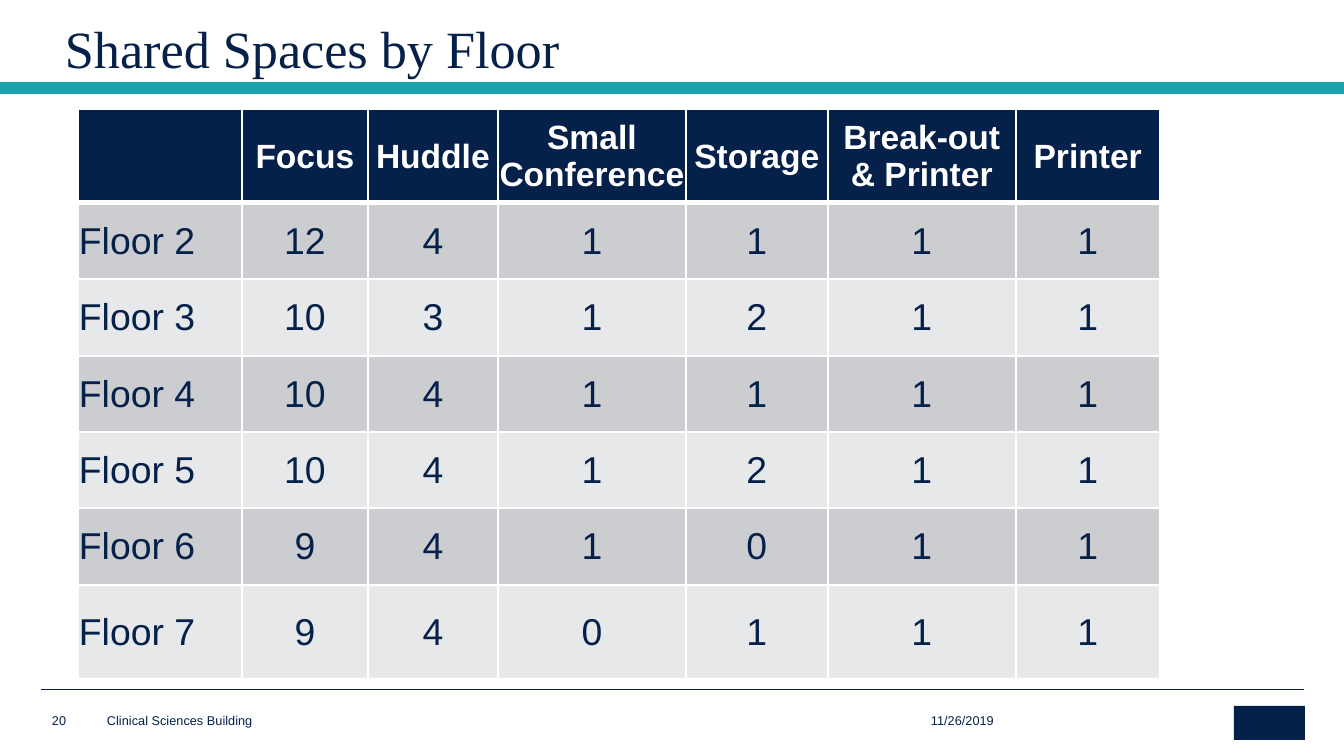
"""Build the Shared Spaces by Floor slide."""
from lxml import etree
from pptx import Presentation
from pptx.dml.color import RGBColor
from pptx.enum.shapes import MSO_CONNECTOR, MSO_SHAPE
from pptx.enum.text import MSO_ANCHOR, PP_ALIGN
from pptx.oxml.ns import qn
from pptx.util import Pt

PX = 914400 / 134.4
LEFT, CENTER = PP_ALIGN.LEFT, PP_ALIGN.CENTER
MIDDLE, BOTTOM = MSO_ANCHOR.MIDDLE, MSO_ANCHOR.BOTTOM
RECT, STRAIGHT = MSO_SHAPE.RECTANGLE, MSO_CONNECTOR.STRAIGHT
NAVY, TEAL, WHITE = "052049", "18A3AC", "FFFFFF"
BANDS = ["E7E8E9", "CCCDD0"]


def px(*values):
    return [round(v * PX) for v in values]


def rgb(value):
    return RGBColor.from_string(value)


prs = Presentation()
prs.slide_width, prs.slide_height = px(1344, 756)
s = prs.slides.add_slide(prs.slide_layouts[6])

for x1, x2 in [(54, 1290), (41, 1304)]:
    line = s.shapes.add_connector(STRAIGHT, *px(x1, 689, x2, 689))
    line.line.color.rgb = rgb(NAVY)
    line.line.width = Pt(0.25)
    etree.SubElement(line._element.spPr, qn("a:effectLst"))

texts = [
    ("20", (52, 711, 36, 17), 6.8, "Arial", 1, (0, 0)),
    ("Clinical Sciences Building", (107, 713, 633, 15), 6.8, "Arial", 1, (0, 0)),
    ("11/26/2019", (931, 711, 136, 17), 6.8, "Arial", 1, (0, 0)),
    ("Shared Spaces by Floor", (52, 17, 1202, 69), 28, "Times New Roman", 0.85, (13, 7)),
]
for text, box, size, font, spacing, (inset_x, inset_y) in texts:
    tf = s.shapes.add_textbox(*px(*box)).text_frame
    tf.word_wrap = True
    tf.vertical_anchor = BOTTOM
    tf.margin_left, tf.margin_right = px(inset_x, inset_x)
    tf.margin_top, tf.margin_bottom = px(inset_y, inset_y)
    p = tf.paragraphs[0]
    p.line_spacing = spacing
    r = p.add_run()
    r.text = text
    r.font.color.rgb = rgb(NAVY)
    for name, value in {"size": Pt(size), "name": font}.items():
        setattr(r.font, name, value)

rows = [
    ["", "Focus", "Huddle", "Small Conference", "Storage", "Break-out & Printer", "Printer"],
    ["Floor 2", "12", "4", "1", "1", "1", "1"],
    ["Floor 3", "10", "3", "1", "2", "1", "1"],
    ["Floor 4", "10", "4", "1", "1", "1", "1"],
    ["Floor 5", "10", "4", "1", "2", "1", "1"],
    ["Floor 6", "9", "4", "1", "0", "1", "1"],
    ["Floor 7", "9", "4", "0", "1", "1", "1"],
]
widths = [164, 126, 130, 188, 142, 188, 144]
heights = [94, 76, 77, 76, 76, 77, 94]
frame = s.shapes.add_table(len(rows), len(widths), *px(78, 109, sum(widths), sum(heights)))
table = frame.table
table.first_row = table.horz_banding = False
for column, width in zip(table.columns, px(*widths)):
    column.width = width
for row, height in zip(table.rows, px(*heights)):
    row.height = height

for i, row in enumerate(rows):
    header = i == 0
    font = {"size": Pt(18 if header else 20), "name": "Arial", "bold": header}
    borders = {"L": 1, "R": 1, "T": 3 if i == 1 else 1, "B": 3 if header else 1}
    for j, text in enumerate(row):
        cell = table.cell(i, j)
        cell.vertical_anchor = MIDDLE
        cell.margin_left, cell.margin_right, cell.margin_top, cell.margin_bottom = px(1, 1, 1, 0)
        tcPr = cell._tc.get_or_add_tcPr()
        for side, width in borders.items():
            ln = etree.SubElement(tcPr, qn(f"a:ln{side}"), w=str(Pt(width)))
            fill = etree.SubElement(ln, qn("a:solidFill"))
            etree.SubElement(fill, qn("a:srgbClr"), val=WHITE)
        cell.fill.solid()
        cell.fill.fore_color.rgb = rgb(NAVY if header else BANDS[i % 2])
        p = cell.text_frame.paragraphs[0]
        p.alignment = LEFT if j == 0 else CENTER
        if text:
            r = p.add_run()
            r.text = text
            r.font.color.rgb = rgb(WHITE if header else NAVY)
            for name, value in font.items():
                setattr(r.font, name, value)

for box, color in [((0, 82, 1344, 12), TEAL), ((1234, 706, 71, 34), NAVY)]:
    sp = s.shapes.add_shape(RECT, *px(*box))
    sp.shadow.inherit = False
    sp.fill.solid()
    sp.fill.fore_color.rgb = rgb(color)
    sp.line.fill.background()

prs.save("out.pptx")
